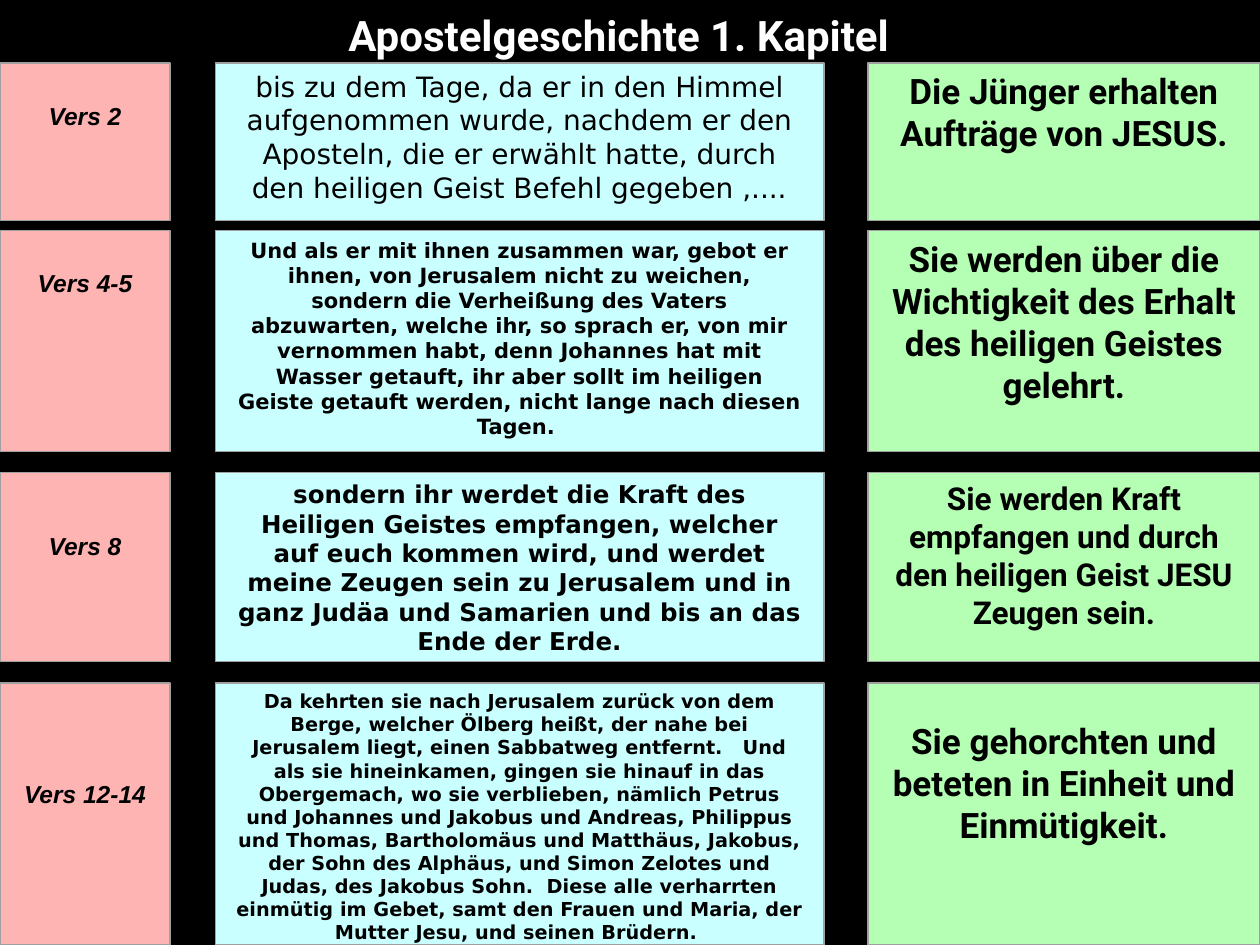
"""Build a slide that sets verses of Apostelgeschichte 1 beside their summaries."""
from pptx import Presentation
from pptx.dml.color import RGBColor
from pptx.enum.shapes import MSO_SHAPE
from pptx.enum.text import MSO_ANCHOR, PP_ALIGN
from pptx.util import Cm, Pt

RECTANGLE = MSO_SHAPE.RECTANGLE
TOP = MSO_ANCHOR.TOP
CENTER = PP_ALIGN.CENTER

BLACK = RGBColor(0x00, 0x00, 0x00)
WHITE = RGBColor(0xFF, 0xFF, 0xFF)
PINK = RGBColor(0xFF, 0xB4, 0xB4)
CYAN = RGBColor(0xCA, 0xFF, 0xFF)
GREEN = RGBColor(0xB4, 0xFF, 0xB4)
GRAY = RGBColor(0xA0, 0xA0, 0xA0)


def write_text(shape, text, size, font, color=BLACK, bold=True, italic=False,
               side=0.42, top=0.13):
    frame = shape.text_frame
    frame.word_wrap = True
    frame.vertical_anchor = TOP
    frame.margin_left = frame.margin_right = Cm(side)
    frame.margin_top = Cm(top)
    paragraph = frame.paragraphs[0]
    paragraph.alignment = CENTER
    run = paragraph.add_run()
    run.text = text
    run.font.size = Pt(size)
    run.font.name = font
    run.font.bold = bold
    run.font.italic = italic
    run.font.color.rgb = color


presentation = Presentation()
presentation.slide_width = Cm(25.4)
presentation.slide_height = Cm(19.05)
slide = presentation.slides.add_slide(presentation.slide_layouts[6])
slide.background.fill.solid()
slide.background.fill.fore_color.rgb = BLACK

# left, width, fill
columns = [(0, 3.43, PINK), (4.34, 12.27, CYAN), (17.5, 7.9, GREEN)]

verse_label = {"size": 14, "font": "Arial", "italic": True}
verse_text = {"font": "DejaVu Sans"}
summary = {"size": 20, "font": "Roboto"}

rows = [
    (1.27, 3.18, [
        ("Vers 2", verse_label | {"top": 0.76}),
        ("bis zu dem Tage, da er in den Himmel aufgenommen wurde, nachdem er den "
         "Aposteln, die er erwählt hatte, durch den heiligen Geist Befehl gegeben ,....",
         verse_text | {"size": 16, "bold": False}),
        ("Die Jünger erhalten Aufträge von JESUS.", summary),
    ]),
    (4.65, 4.45, [
        ("Vers 4-5", verse_label | {"top": 0.76}),
        ("Und als er mit ihnen zusammen war, gebot er ihnen, von Jerusalem nicht zu "
         "weichen, sondern die Verheißung des Vaters abzuwarten, welche ihr, so sprach "
         "er, von mir vernommen habt, denn Johannes hat mit Wasser getauft, ihr aber "
         "sollt im heiligen Geiste getauft werden, nicht lange nach diesen Tagen. ",
         verse_text | {"size": 12}),
        ("Sie werden über die Wichtigkeit des Erhalt des heiligen Geistes gelehrt.",
         summary),
    ]),
    (9.53, 3.81, [
        ("Vers 8", verse_label | {"top": 1.18}),
        ("sondern ihr werdet die Kraft des Heiligen Geistes empfangen, welcher auf euch "
         "kommen wird, und werdet meine Zeugen sein zu Jerusalem und in ganz Judäa und "
         "Samarien und bis an das Ende der Erde.",
         verse_text | {"size": 14}),
        ("Sie werden Kraft empfangen und durch den heiligen Geist JESU Zeugen sein.",
         summary | {"size": 18}),
    ]),
    (13.77, 5.28, [
        ("Vers 12-14", verse_label | {"top": 1.93}),
        ("Da kehrten sie nach Jerusalem zurück von dem Berge, welcher Ölberg heißt, der "
         "nahe bei Jerusalem liegt, einen Sabbatweg entfernt.   Und als sie hineinkamen, "
         "gingen sie hinauf in das Obergemach, wo sie verblieben, nämlich Petrus und "
         "Johannes und Jakobus und Andreas, Philippus und Thomas, Bartholomäus und "
         "Matthäus, Jakobus, der Sohn des Alphäus, und Simon Zelotes und Judas, des "
         "Jakobus Sohn.  Diese alle verharrten einmütig im Gebet, samt den Frauen und "
         "Maria, der Mutter Jesu, und seinen Brüdern. ",
         verse_text | {"size": 11}),
        ("Sie gehorchten und beteten in Einheit und Einmütigkeit.",
         summary | {"top": 0.74}),
    ]),
]

for row_top, height, cells in rows:
    for (left, width, fill), (text, text_format) in zip(columns, cells):
        cell = slide.shapes.add_shape(
            RECTANGLE, Cm(left), Cm(row_top), Cm(width), Cm(height))
        cell.shadow.inherit = False
        cell.fill.solid()
        cell.fill.fore_color.rgb = fill
        cell.line.color.rgb = GRAY
        cell.line.width = Pt(0)
        write_text(cell, text, **text_format)

title = slide.shapes.add_textbox(Cm(5.28), Cm(0), Cm(14.6), Cm(1.27))
write_text(title, "Apostelgeschichte 1. Kapitel ", size=24, font="Roboto",
           color=WHITE, side=0.25, top=0.2)

presentation.save("out.pptx")
